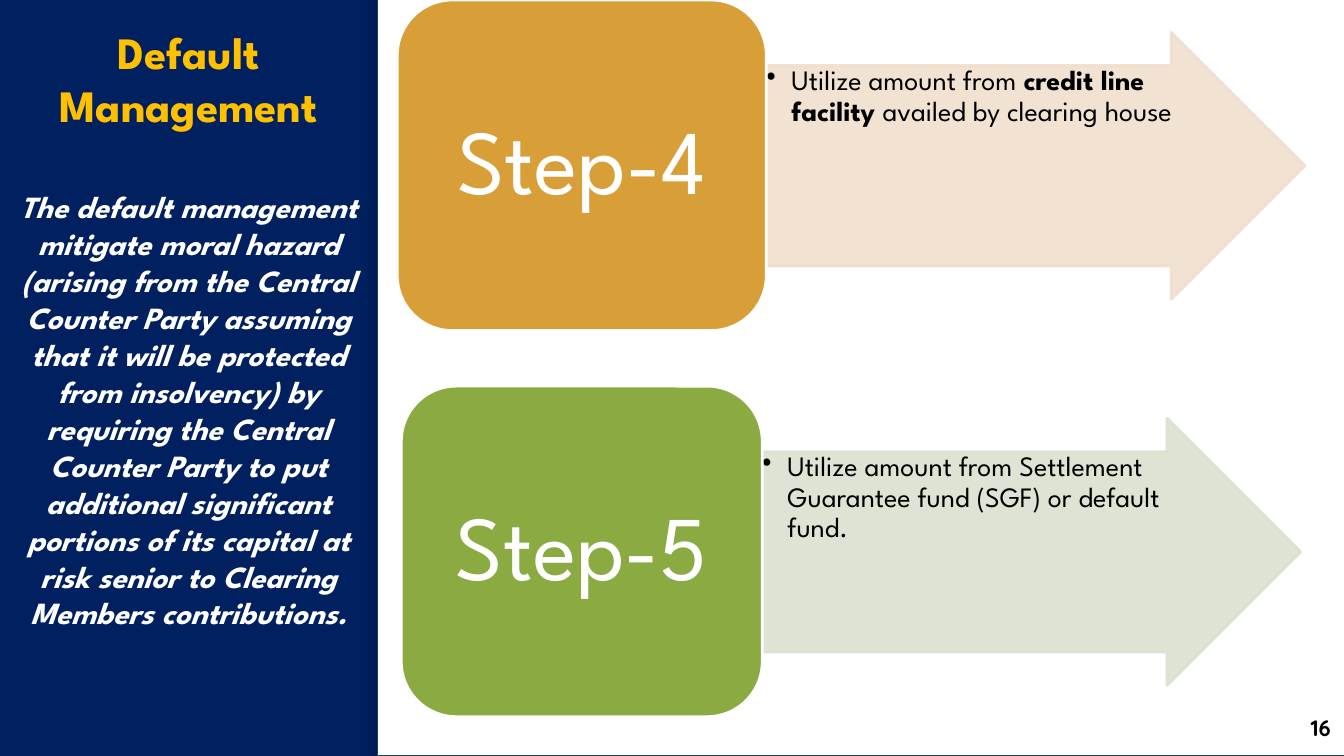
from lxml.etree import SubElement
from pptx import Presentation
from pptx.dml.color import RGBColor
from pptx.enum.shapes import MSO_SHAPE
from pptx.enum.text import MSO_ANCHOR, MSO_AUTO_SIZE, PP_ALIGN
from pptx.oxml.ns import qn
from pptx.util import Inches, Pt

WIDE, HIGH = Inches(13.33), Inches(7.5)
FONT = "League Spartan"

NAVY = RGBColor(0x00, 0x20, 0x60)
DUSK = RGBColor(0x00, 0x1A, 0x51)
EDGE = RGBColor(0x1D, 0x40, 0x5D)
GOLD = RGBColor(0xFF, 0xC0, 0x00)
WHITE = RGBColor(0xFF, 0xFF, 0xFF)
BLACK = RGBColor(0x00, 0x00, 0x00)
AMBER = RGBColor(0xD8, 0x9F, 0x39)
SAND = RGBColor(0xF0, 0xDF, 0xCE)
GREEN = RGBColor(0x8B, 0xAB, 0x42)
SAGE = RGBColor(0xDA, 0xE2, 0xCF)

# Shares of the slide, in percent
SIDE = 28.06
ROW = 51.07
BLOCK_H = 43.73
ARROW_TOP, ARROW_W, ARROW_H = 4.27, 40.14, 35.33

TITLE = "Default Management"
ABOUT = (
    "The default management mitigate moral hazard (arising from the Central "
    "Counter Party assuming that it will be protected from insolvency) by "
    "requiring the Central Counter Party to put additional significant "
    "portions of its capital at risk senior to Clearing Members contributions."
)

# Label, left, width, block colour, arrow colour, (text, bold) parts
STEPS = [
    ("Step-4", 29.56, 27.46, AMBER, SAND,
     [("Utilize amount from ", False), ("credit line facility ", True),
      ("availed by clearing house", False)]),
    ("Step-5", 29.86, 26.86, GREEN, SAGE,
     [("Utilize amount from Settlement Guarantee fund (SGF) or default fund.",
       False)]),
]


def place(x, y, w, h):
    """Turn percent shares into slide lengths."""
    return [int(side * share / 100)
            for side, share in zip((WIDE, HIGH, WIDE, HIGH), (x, y, w, h))]


def style(run, size, color, bold=False, italic=False, font=FONT):
    run.font.name, run.font.size = font, Pt(size)
    run.font.bold, run.font.italic = bold, italic
    run.font.color.rgb = color


def inset(frame, x, y, anchor):
    frame.word_wrap = True
    frame.auto_size = MSO_AUTO_SIZE.NONE
    frame.vertical_anchor = anchor
    frame.margin_left = frame.margin_right = Inches(x)
    frame.margin_top = frame.margin_bottom = Inches(y)


def add_box(slide, kind, area, fill, line, width):
    box = slide.shapes.add_shape(kind, *place(*area))
    box.shadow.inherit = False
    box.fill.solid()
    box.fill.fore_color.rgb = fill
    box.line.color.rgb = line
    box.line.width = Pt(width)
    return box


def fade(shape, share):
    """Set the opacity of a shape's fill and line."""
    for color in shape.element.spPr.iter(qn("a:srgbClr")):
        SubElement(color, qn("a:alpha"), val=str(share * 1000))


def add_title(slide):
    title = slide.shapes.title
    title.left, title.top, title.width, title.height = place(
        0, 1.47, SIDE, 98.53)
    frame = title.text_frame
    inset(frame, 0.13, 0.13, MSO_ANCHOR.TOP)
    frame.text = f"{TITLE}\n{ABOUT}"
    head, about = frame.paragraphs
    head.alignment = about.alignment = PP_ALIGN.CENTER
    about.space_before = Pt(40)
    style(head.runs[0], 32, GOLD, bold=True)
    style(about.runs[0], 22, WHITE, bold=True, italic=True)


def add_panel(slide):
    strip = add_box(slide, MSO_SHAPE.RECTANGLE, (27.08, 0, 1.2, 100),
                    NAVY, NAVY, 0)
    strip.line.fill.background()
    strip.fill.gradient()
    strip.fill.gradient_angle = 0
    for stop, color in zip(strip.fill.gradient_stops, (NAVY, DUSK)):
        stop.color.rgb = color
    add_box(slide, MSO_SHAPE.RECTANGLE, (SIDE, 0, 72, 100), WHITE, EDGE, 0.75)


def add_arrow(slide, left, top, color, parts):
    arrow = add_box(slide, MSO_SHAPE.RIGHT_ARROW,
                    (left, top, ARROW_W, ARROW_H), color, color, 2)
    arrow.adjustments[0], arrow.adjustments[1] = 0.75, 0.5
    fade(arrow, 90)
    inset(arrow.text_frame, 0.01, 0.01, MSO_ANCHOR.TOP)
    para = arrow.text_frame.paragraphs[0]
    para.alignment, para.line_spacing = PP_ALIGN.LEFT, 0.9
    # Hanging bullet
    props = para._p.get_or_add_pPr()
    props.set("marL", str(Inches(0.25)))
    props.set("indent", str(-Inches(0.25)))
    SubElement(props, qn("a:buChar"), char="•")
    for text, bold in parts:
        run = para.add_run()
        run.text = text
        style(run, 20, BLACK, bold)


def add_block(slide, label, area, color):
    block = add_box(slide, MSO_SHAPE.ROUNDED_RECTANGLE, area, color, WHITE, 2)
    inset(block.text_frame, 0.27, 0.14, MSO_ANCHOR.MIDDLE)
    block.text_frame.text = label
    para = block.text_frame.paragraphs[0]
    para.alignment, para.line_spacing = PP_ALIGN.CENTER, 0.9
    style(para.runs[0], 65, WHITE)


def add_number(slide, text):
    box = slide.shapes.add_textbox(*place(94, 92.4, 6, 7.6))
    inset(box.text_frame, 0.13, 0.13, MSO_ANCHOR.MIDDLE)
    box.text_frame.text = text
    para = box.text_frame.paragraphs[0]
    para.alignment = PP_ALIGN.RIGHT
    style(para.runs[0], 16, BLACK, bold=True, font="Quicksand")


def main():
    deck = Presentation()
    deck.slide_width, deck.slide_height = WIDE, HIGH
    slide = deck.slides.add_slide(deck.slide_layouts[5])
    slide.background.fill.solid()
    slide.background.fill.fore_color.rgb = NAVY

    # Side bar and white panel
    add_title(slide)
    add_panel(slide)
    add_number(slide, "16")

    # One row per step
    for row, (label, left, width, dark, light, parts) in enumerate(STEPS):
        top = row * ROW
        add_arrow(slide, left + width - 0.08, top + ARROW_TOP, light, parts)
        add_block(slide, label, (left, top, width, BLOCK_H), dark)

    deck.save("out.pptx")


if __name__ == "__main__":
    main()
